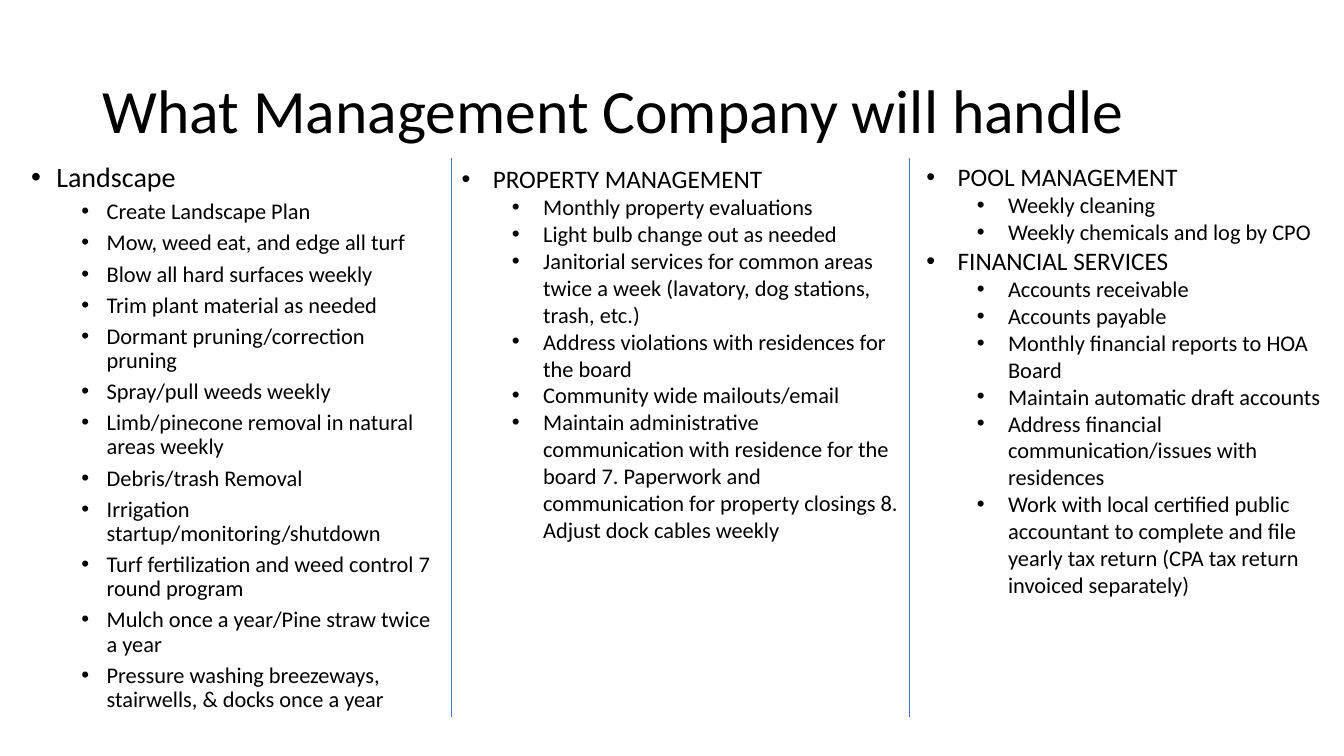
from lxml import etree
from pptx import Presentation
from pptx.dml.color import RGBColor
from pptx.enum.shapes import MSO_CONNECTOR
from pptx.enum.text import MSO_ANCHOR, MSO_AUTO_SIZE
from pptx.oxml.ns import qn
from pptx.util import Inches, Pt

STRAIGHT = MSO_CONNECTOR.STRAIGHT
TOP, MIDDLE = MSO_ANCHOR.TOP, MSO_ANCHOR.MIDDLE
NO_AUTOFIT, GROW = MSO_AUTO_SIZE.NONE, MSO_AUTO_SIZE.SHAPE_TO_FIT_TEXT

LANDSCAPE = [("Landscape", [
    "Create Landscape Plan",
    "Mow, weed eat, and edge all turf",
    "Blow all hard surfaces weekly",
    "Trim plant material as needed",
    "Dormant pruning/correction pruning",
    "Spray/pull weeds weekly",
    "Limb/pinecone removal in natural areas weekly",
    "Debris/trash Removal",
    "Irrigation startup/monitoring/shutdown",
    "Turf fertilization and weed control 7 round program",
    "Mulch once a year/Pine straw twice a year",
    "Pressure washing breezeways, stairwells, & docks once a year",
])]
PROPERTY = [("PROPERTY MANAGEMENT", [
    "Monthly property evaluations",
    "Light bulb change out as needed",
    "Janitorial services for common areas twice a week "
    "(lavatory, dog stations, trash, etc.)",
    "Address violations with residences for the board",
    "Community wide mailouts/email",
    "Maintain administrative communication with residence for the board "
    "7. Paperwork and communication for property closings "
    "8. Adjust dock cables weekly",
])]
POOL_AND_FINANCE = [
    ("POOL MANAGEMENT", [
        "Weekly cleaning",
        "Weekly chemicals and log by CPO",
    ]),
    ("FINANCIAL SERVICES", [
        "Accounts receivable",
        "Accounts payable",
        "Monthly financial reports to HOA Board",
        "Maintain automatic draft accounts",
        "Address financial communication/issues with residences",
        "Work with local certified public accountant to complete and file "
        "yearly tax return (CPA tax return invoiced separately)",
    ]),
]


def color(value):
    return RGBColor.from_string(value)


class SlideBuilder:
    font_name = "Calibri"
    text_color = "000000"
    divider_color = "4472C4"
    item_size = 16

    def __init__(self, slide):
        self.slide = slide

    def text_frame(self, left, top, width, height, anchor=TOP, fit=NO_AUTOFIT):
        shape = self.slide.shapes.add_textbox(
            Inches(left), Inches(top), Inches(width), Inches(height))
        frame = shape.text_frame
        frame.word_wrap = True
        frame.auto_size = fit
        frame.vertical_anchor = anchor
        return frame

    def add_run(self, paragraph, text, size):
        run = paragraph.add_run()
        run.text = text
        run.font.name = self.font_name
        run.font.size = Pt(size)
        run.font.color.rgb = color(self.text_color)

    def title(self, text, *box):
        paragraph = self.text_frame(*box, anchor=MIDDLE).paragraphs[0]
        paragraph.line_spacing = 0.9
        self.add_run(paragraph, text, 44)

    def bullet(self, paragraph, level, hanging):
        paragraph.level = level
        properties = paragraph._p.get_or_add_pPr()
        properties.set("marL", str(Inches(0.5 * level + hanging)))
        properties.set("indent", str(-Inches(hanging)))
        etree.SubElement(properties, qn("a:buFont")).set("typeface", "Arial")
        etree.SubElement(properties, qn("a:buChar")).set("char", "•")

    def bullet_list(self, sections, *box, heading_size=18, hanging=0.31,
                    line_spacing=1.0, space_before=0, fit=GROW):
        frame = self.text_frame(*box, fit=fit)
        lines = []
        for heading, items in sections:
            lines.append((heading, 0, heading_size))
            lines += [(item, 1, self.item_size) for item in items]
        for index, (text, level, size) in enumerate(lines):
            paragraph = frame.add_paragraph() if index else frame.paragraphs[0]
            self.bullet(paragraph, level, hanging)
            paragraph.line_spacing = line_spacing
            paragraph.space_before = Pt(space_before if index else 0)
            self.add_run(paragraph, text, size)

    def divider(self, x, top, bottom):
        connector = self.slide.shapes.add_connector(
            STRAIGHT, Inches(x), Inches(top), Inches(x), Inches(bottom))
        connector.line.color.rgb = color(self.divider_color)
        connector.line.width = Pt(0.5)
        etree.SubElement(connector._element.spPr, qn("a:effectLst"))


def main():
    presentation = Presentation()
    presentation.slide_width = Inches(13.33)
    presentation.slide_height = Inches(7.5)
    slide = presentation.slides.add_slide(presentation.slide_layouts[6])
    builder = SlideBuilder(slide)

    # Title
    builder.title("What Management Company will handle", 0.92, 0.4, 11.5, 1.45)

    # Three columns of services
    builder.bullet_list(LANDSCAPE, 0.21, 1.57, 4.21, 6.56, heading_size=20,
                        hanging=0.25, line_spacing=0.9, space_before=5,
                        fit=NO_AUTOFIT)
    builder.bullet_list(POOL_AND_FINANCE, 9.09, 1.55, 4.25, 4.48)
    builder.bullet_list(PROPERTY, 4.48, 1.57, 4.54, 3.9)

    # Column dividers
    for x in (4.48, 9.02):
        builder.divider(x, 1.57, 7.11)

    presentation.save("out.pptx")


if __name__ == "__main__":
    main()
